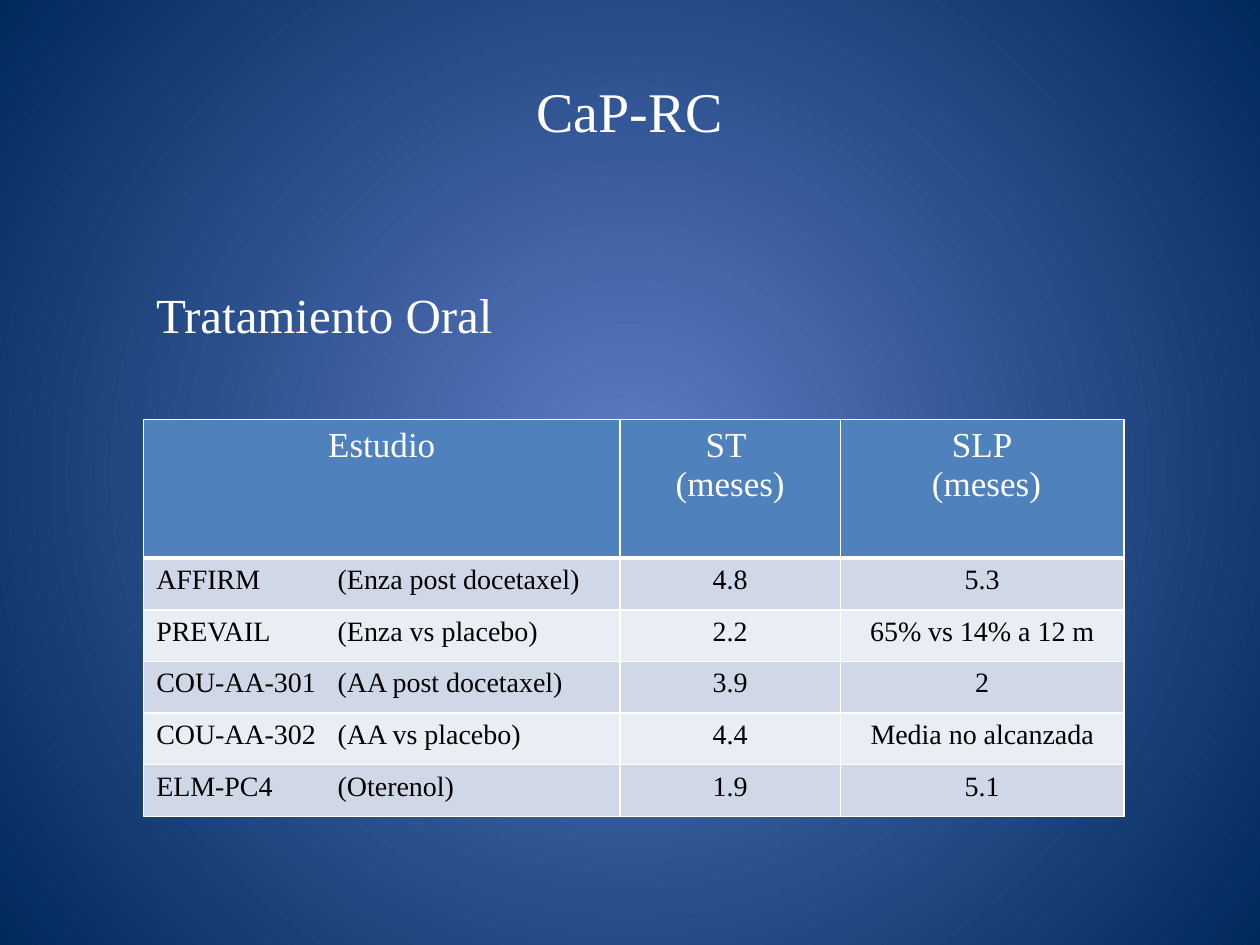
from dataclasses import dataclass

from lxml.etree import SubElement
from pptx import Presentation
from pptx.dml.color import RGBColor
from pptx.enum.text import MSO_ANCHOR, PP_ALIGN
from pptx.oxml import parse_xml
from pptx.oxml.ns import nsdecls, qn
from pptx.util import Inches, Pt

WIDTH, HEIGHT = Inches(10), Inches(7.5)
FONT = "Times New Roman"
WHITE, BLACK, HEADER_BLUE = "FFFFFF", "000000", "4F81BD"
BANDS = ("D0D8E8", "E9EDF4")
COLUMN_WIDTHS = (3.78, 1.75, 2.25)
HEADER_HEIGHT, ROW_HEIGHT = 1.1, 0.41
TREATMENT_TAB = 1.44


@dataclass
class Heading:
    text: str
    left: float
    top: float
    width: float
    height: float
    size: int
    align: PP_ALIGN
    anchor: MSO_ANCHOR
    wrap: bool


@dataclass
class Study:
    name: str
    treatment: str
    survival: str
    progression_free: str

    def cells(self) -> tuple[str, str, str]:
        """Return the texts of the study's table row."""
        return f"{self.name}\t({self.treatment})", self.survival, self.progression_free


HEADINGS = (
    Heading("CaP-RC", 0.05, 0.033, 0.9, 0.167, 32,
            PP_ALIGN.CENTER, MSO_ANCHOR.MIDDLE, True),
    Heading("Tratamiento Oral", 0.114, 0.295, 0.29, 0.076, 28,
            PP_ALIGN.LEFT, MSO_ANCHOR.TOP, False),
)
COLUMN_TITLES = ("Estudio", "ST \n(meses)", "SLP\n (meses)")
STUDIES = (
    Study("AFFIRM", "Enza post docetaxel", "4.8", "5.3"),
    Study("PREVAIL", "Enza vs placebo", "2.2", "65% vs 14% a 12 m"),
    Study("COU-AA-301", "AA post docetaxel", "3.9", "2"),
    Study("COU-AA-302", "AA vs placebo", "4.4", "Media no alcanzada"),
    Study("ELM-PC4", "Oterenol", "1.9", "5.1"),
)


def rgb(value: str) -> RGBColor:
    """Turn a hex string into a colour."""
    return RGBColor.from_string(value)


def write(frame, text: str, size: int, colour: str, align: PP_ALIGN) -> None:
    """Fill a text frame and format all its runs alike."""
    frame.text = text
    for paragraph in frame.paragraphs:
        paragraph.alignment = align
        for run in paragraph.runs:
            run.font.name = FONT
            run.font.size = Pt(size)
            run.font.color.rgb = rgb(colour)


def paint_background(slide, centre: str, edge: str) -> None:
    """Give the slide a circular gradient from its centre outwards."""
    fill = slide.background.fill
    fill.gradient()
    for stop, colour, position in zip(fill.gradient_stops, (centre, edge), (0, 1)):
        stop.color.rgb = rgb(colour)
        stop.position = position
    gradient = next(slide.element.iter(qn("a:gradFill")))
    gradient.replace(gradient.find(qn("a:lin")), parse_xml(
        f'<a:path {nsdecls("a")} path="circle">'
        '<a:fillToRect l="50000" t="50000" r="50000" b="50000"/></a:path>'))


def add_heading(slide, heading: Heading) -> None:
    """Place a heading by its shares of the slide's size."""
    box = slide.shapes.add_textbox(
        int(WIDTH * heading.left), int(HEIGHT * heading.top),
        int(WIDTH * heading.width), int(HEIGHT * heading.height))
    box.text_frame.word_wrap = heading.wrap
    box.text_frame.vertical_anchor = heading.anchor
    write(box.text_frame, heading.text, heading.size, WHITE, heading.align)


def add_borders(cell, top: int, bottom: int) -> None:
    """Draw white cell borders, with the given top and bottom weights."""
    properties = cell._tc.get_or_add_tcPr()
    for index, (side, weight) in enumerate(
            (("L", 1), ("R", 1), ("T", top), ("B", bottom))):
        properties.insert(index, parse_xml(
            f'<a:ln{side} {nsdecls("a")} w="{Pt(weight)}"><a:solidFill>'
            f'<a:srgbClr val="{WHITE}"/></a:solidFill></a:ln{side}>'))


def add_tab(paragraph, position: float) -> None:
    """Set a left tab stop in a paragraph."""
    tabs = SubElement(paragraph._p.get_or_add_pPr(), qn("a:tabLst"))
    SubElement(tabs, qn("a:tab"), pos=str(Inches(position)), algn="l")


def add_study_table(slide) -> None:
    """Build the table of studies with its header and banded rows."""
    rows = (COLUMN_TITLES, *(study.cells() for study in STUDIES))
    heights = (HEADER_HEIGHT, *(ROW_HEIGHT for _ in STUDIES))
    table = slide.shapes.add_table(
        len(rows), len(COLUMN_WIDTHS), Inches(1.14), Inches(3.33),
        Inches(sum(COLUMN_WIDTHS)), Inches(sum(heights))).table
    for column, width in zip(table.columns, COLUMN_WIDTHS):
        column.width = Inches(width)
    for r, (texts, height) in enumerate(zip(rows, heights)):
        table.rows[r].height = Inches(height)
        is_header = r == 0
        for c, text in enumerate(texts):
            cell = table.cell(r, c)
            is_study = c == 0 and not is_header
            write(cell.text_frame, text, 20 if is_header else 16,
                  WHITE if is_header else BLACK,
                  PP_ALIGN.LEFT if is_study else PP_ALIGN.CENTER)
            for run in (run for p in cell.text_frame.paragraphs for run in p.runs):
                run.font.bold = False
            if is_study:
                add_tab(cell.text_frame.paragraphs[0], TREATMENT_TAB)
            cell.fill.solid()
            cell.fill.fore_color.rgb = rgb(
                HEADER_BLUE if is_header else BANDS[(r - 1) % 2])
            add_borders(cell, 3 if r == 1 else 1, 3 if is_header else 1)


def main() -> None:
    """Build and save the presentation."""
    presentation = Presentation()
    presentation.slide_width, presentation.slide_height = WIDTH, HEIGHT
    slide = presentation.slides.add_slide(presentation.slide_layouts[6])
    paint_background(slide, "5E7CC5", "00295C")
    for heading in HEADINGS:
        add_heading(slide, heading)
    add_study_table(slide)
    presentation.save("out.pptx")


if __name__ == "__main__":
    main()
